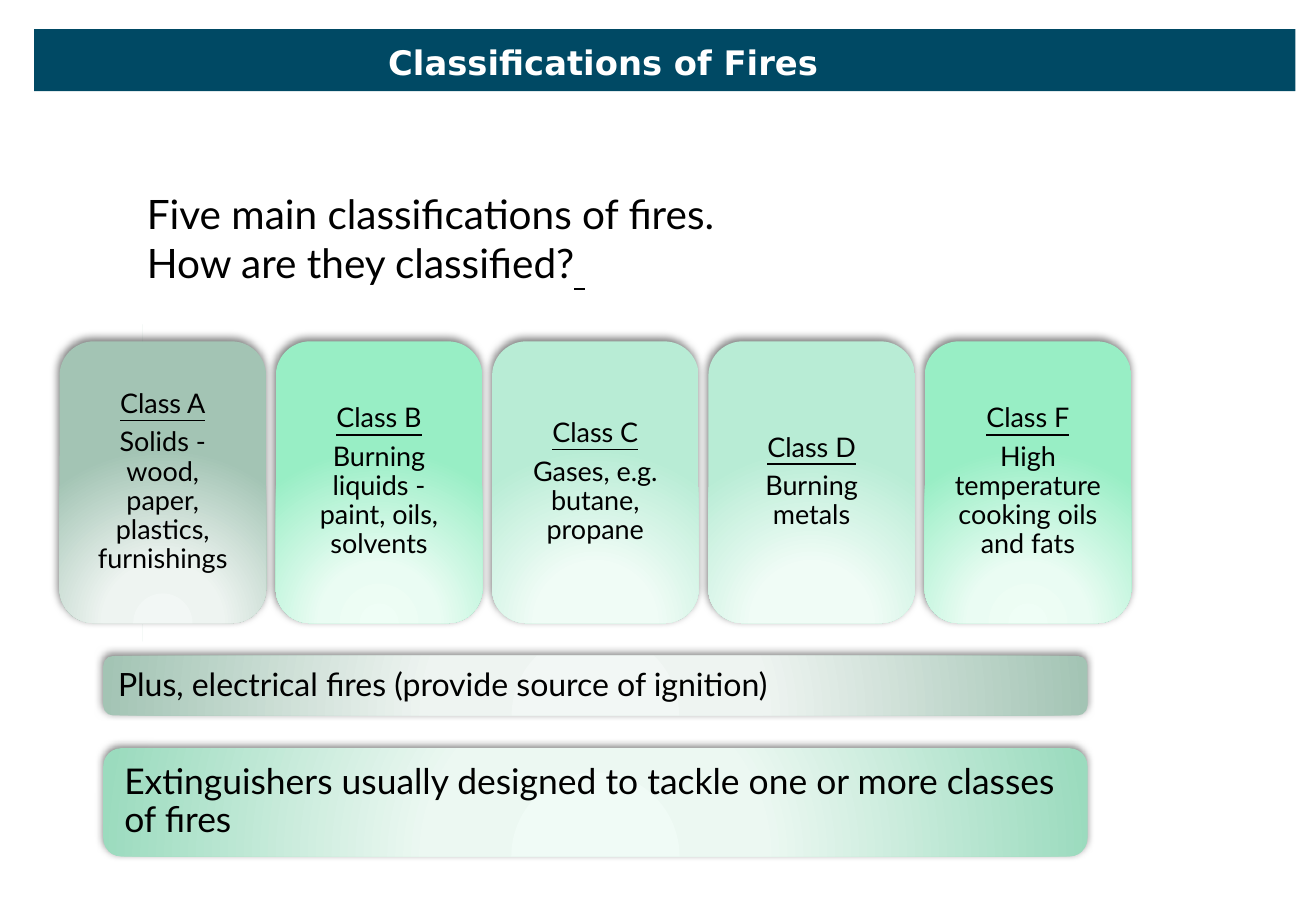
from lxml import etree
from pptx import Presentation
from pptx.dml.color import RGBColor
from pptx.enum.shapes import MSO_SHAPE
from pptx.enum.text import MSO_ANCHOR, MSO_AUTO_SIZE, PP_ALIGN
from pptx.oxml import parse_xml
from pptx.oxml.ns import nsdecls
from pptx.util import Inches, Pt

RECT, ROUND, ARROW = MSO_SHAPE.RECTANGLE, MSO_SHAPE.ROUNDED_RECTANGLE, MSO_SHAPE.RIGHT_ARROW
MIDDLE, NO_FIT = MSO_ANCHOR.MIDDLE, MSO_AUTO_SIZE.NONE
LEFT, CENTER = PP_ALIGN.LEFT, PP_ALIGN.CENTER

BLACK = RGBColor(0x00, 0x00, 0x00)
WHITE = RGBColor(0xFF, 0xFF, 0xFF)
BAND = RGBColor(0x00, 0x49, 0x64)
ARROW_FILL = RGBColor(0xB4, 0xD0, 0xC3)

# Gradient stops: centre, at 34 %, edge
GREY = [RGBColor.from_string(c) for c in ("F2F7F5", "EEF4F1", "A3C4B4")]
BRIGHT = [RGBColor.from_string(c) for c in ("EFFEF6", "EAFCF3", "98EEC5")]
PALE = [RGBColor.from_string(c) for c in ("F3FDF9", "F0FCF6", "B8ECD5")]
GREEN = [RGBColor.from_string(c) for c in ("F0FBF6", "ECF8F2", "9BDBBE")]
STOPS = (0, 34, 100)

# Card grid
CARD_LEFT, CARD_TOP, CARD_W, CARD_H, CARD_PITCH = 0.49, 2.81, 1.7, 2.32, 1.78
BAR_LEFT, BAR_W = 0.85, 8.1

CARDS = [
    ("Class A", "Solids - wood, paper, plastics, furnishings", GREY),
    ("Class B", "Burning liquids - paint, oils, solvents", BRIGHT),
    ("Class C", "Gases, e.g. butane, propane", PALE),
    ("Class D", "Burning metals", PALE),
    ("Class F", "High temperature cooking oils and fats", BRIGHT),
]
# Text, top, height, font size, inset, gradient
BARS = [
    ("Extinguishers usually designed to tackle one or more classes of fires",
     6.16, 0.89, 21, 0.13, GREEN),
    ("Plus, electrical fires (provide source of ignition)", 5.4, 0.49, 19, 0.1, GREY),
]


def format_run(r, size, color=BLACK, name="Lato"):
    r.font.size = Pt(size)
    r.font.name = name
    r.font.color.rgb = color


def add_block(slide, kind, left, top, width, height):
    sp = slide.shapes.add_shape(kind, Inches(left), Inches(top), Inches(width), Inches(height))
    sp.shadow.inherit = False
    sp.line.fill.background()
    return sp


def solid_fill(sp, color):
    sp.fill.solid()
    sp.fill.fore_color.rgb = color


def radial_fill(sp, colors):
    """Circular gradient that spreads from below the shape."""
    stops = "".join(f'<a:gs pos="{pos * 1000}"><a:srgbClr val="{color}"/></a:gs>'
                    for pos, color in zip(STOPS, colors))
    grad = parse_xml(
        f'<a:gradFill {nsdecls("a")} rotWithShape="1"><a:gsLst>{stops}</a:gsLst>'
        '<a:path path="circle"><a:fillToRect l="50000" t="155000" r="50000" b="-55000"/>'
        '</a:path></a:gradFill>')
    sp.fill.background()
    props = sp.element.spPr
    props.replace(props.find("{*}noFill"), grad)


def drop_shadow(sp):
    effects = sp.element.spPr.find("{*}effectLst")
    shadow = parse_xml(
        f'<a:outerShdw {nsdecls("a")} blurRad="{Pt(5)}" dist="{Pt(2)}" dir="{245 * 60000}" '
        'rotWithShape="0"/>')
    color = etree.SubElement(shadow, shadow.tag.replace("outerShdw", "srgbClr"), val="000000")
    etree.SubElement(color, shadow.tag.replace("outerShdw", "alpha"), val="50000")
    effects.append(shadow)


def add_panel(slide, box, colors, lines, size, inset, align):
    """Rounded panel with a gradient, a shadow and its own text."""
    sp = add_block(slide, ROUND, *box)
    radial_fill(sp, colors)
    drop_shadow(sp)
    tf = sp.text_frame
    tf.word_wrap = True
    tf.vertical_anchor = MIDDLE
    tf.margin_left = tf.margin_right = Inches(inset)
    tf.margin_top = tf.margin_bottom = Inches(inset)
    tf.text = "\n".join(lines)
    for p in tf.paragraphs:
        p.alignment = align
        p.line_spacing = 0.9
        p.space_after = Pt(0.35 * size)
        format_run(p.runs[0], size)
    return tf


def add_title(slide):
    band = add_block(slide, RECT, 0.28, 0.24, 10.38, 0.51)
    solid_fill(band, BAND)
    title = slide.shapes.title
    band.element.addnext(title.element)  # title in front of the band
    title.left, title.top = Inches(3.09), Inches(0.29)
    title.width, title.height = Inches(3.75), Inches(0.44)
    tf = title.text_frame
    tf.text = "Classifications of Fires"
    tf.word_wrap = False
    tf.auto_size = NO_FIT
    tf.vertical_anchor = MIDDLE
    p = tf.paragraphs[0]
    p.alignment = CENTER
    format_run(p.runs[0], 20, WHITE, "DejaVu Sans")
    p.runs[0].font.bold = True


def add_question(slide):
    box = slide.shapes.add_textbox(Inches(1.11), Inches(1.51), Inches(7.59), Inches(0.91))
    tf = box.text_frame
    tf.word_wrap = True
    tf.text = "Five main classifications of fires.\nHow are they classified?"
    mark = tf.paragraphs[1].add_run()
    mark.text = " "
    mark.font.underline = True
    for p in tf.paragraphs:
        for r in p.runs:
            format_run(r, 24)


def main():
    prs = Presentation()
    prs.slide_width, prs.slide_height = Inches(10.83), Inches(7.5)
    slide = prs.slides.add_slide(prs.slide_layouts[5])

    add_title(slide)
    add_question(slide)

    # Full-width statements
    for text, top, height, size, inset, colors in BARS:
        add_panel(slide, (BAR_LEFT, top, BAR_W, height), colors, [text], size, inset, LEFT)

    # Thin arrow behind the cards
    arrow = add_block(slide, ARROW, 1.17, 2.67, 0, 2.61)
    solid_fill(arrow, ARROW_FILL)
    drop_shadow(arrow)

    # Fire class cards
    for i, (label, detail, colors) in enumerate(CARDS):
        box = (CARD_LEFT + i * CARD_PITCH, CARD_TOP, CARD_W, CARD_H)
        tf = add_panel(slide, box, colors, [label, detail], 16, 0.15, CENTER)
        tf.paragraphs[0].runs[0].font.underline = True

    prs.save("out.pptx")


if __name__ == "__main__":
    main()
